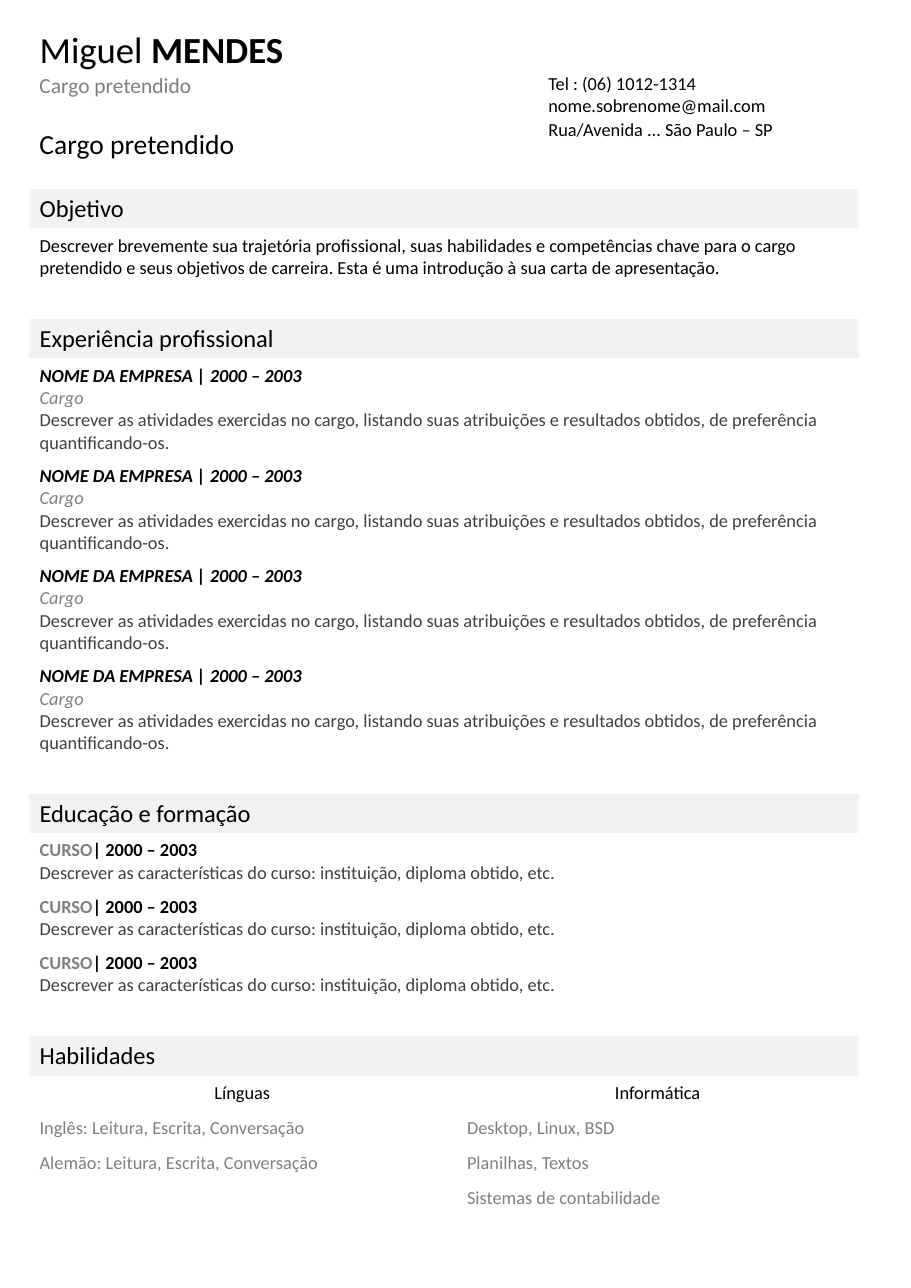
from dataclasses import dataclass

from pptx import Presentation
from pptx.dml.color import RGBColor as Color
from pptx.enum.text import MSO_ANCHOR as Anchor, MSO_AUTO_SIZE as AutoSize, PP_ALIGN as Align
from pptx.util import Inches, Pt


@dataclass(frozen=True)
class Theme:
    font: str = "Calibri"
    black: str = "000000"
    dark: str = "404040"
    grey: str = "808080"
    subtitle_grey: str = "7F7F7F"
    band: str = "F2F2F2"
    name: int = 24
    role: int = 18
    heading: int = 16
    subtitle: int = 14
    body: int = 12


theme = Theme()


def span(text, size=theme.body, color=theme.black, bold=False, italic=False):
    return text, size, color, bold, italic


def write(frame, lines, align=Align.LEFT):
    """Fill a text frame with one paragraph per line; a line is a list of spans."""
    frame.text = "\n".join("" for _ in lines)
    for para, spans in zip(frame.paragraphs, lines):
        para.alignment = align
        for text, size, color, bold, italic in spans:
            run = para.add_run()
            run.text = text
            run.font.name = theme.font
            run.font.size = Pt(size)
            run.font.bold = bold
            run.font.italic = italic
            run.font.color.rgb = Color.from_string(color)


deck = Presentation()
deck.slide_width, deck.slide_height = Inches(8.27), Inches(11.69)
page = deck.slides.add_slide(deck.slide_layouts[5])
left, contact_left = 0.26, 4.88

# Résumé rows: height, then the cells; a single cell spans both columns
job = [
    [span("NOME DA EMPRESA | 2000 – 2003", bold=True, italic=True)],
    [span("Cargo", color=theme.grey, italic=True)],
    [span("Descrever as atividades exercidas no cargo, listando suas atribuições e "
          "resultados obtidos, de preferência quantificando-os.", color=theme.dark)],
]
course = [
    [span("CURSO", color=theme.grey, bold=True), span("| 2000 – 2003", bold=True)],
    [span("Descrever as características do curso: instituição, diploma obtido, etc.",
          color=theme.dark)],
]
objective = [[span(
    "Descrever brevemente sua trajetória profissional, suas habilidades e competências "
    "chave para o cargo pretendido e seus objetivos de carreira. Esta é uma introdução "
    "à sua carta de apresentação.")]]
skills = [
    ("Inglês: Leitura, Escrita, Conversação", "Desktop, Linux, BSD"),
    ("Alemão: Leitura, Escrita, Conversação", "Planilhas, Textos"),
    ("", "Sistemas de contabilidade"),
]
sections = [
    ("Objetivo", 0.51, [objective]),
    ("Experiência profissional", 0.91, [job] * 4),
    ("Educação e formação", 0.51, [course] * 3),
    ("Habilidades", 0, []),
]
heading_height, gap_height, skill_height = 0.37, 0.3, 0.32
rows, heading_rows = [], []
for title, height, entries in sections:
    if rows:
        rows.append((gap_height, [[]]))
    heading_rows.append(len(rows))
    rows.append((heading_height, [[[span(title, theme.heading)]]]))
    rows += [(height, [entry]) for entry in entries]
skill_title_row = len(rows)
rows.append((skill_height, [[[span("Línguas")]], [[span("Informática")]]]))
for pair in skills:
    rows.append((skill_height, [[[span(text, color=theme.grey)]] if text else [] for text in pair]))

column_widths = 3.88, 3.66
table = page.shapes.add_table(
    len(rows), len(column_widths), Inches(left), Inches(1.71),
    Inches(sum(column_widths)), Inches(sum(height for height, _ in rows))).table
table.first_row = table.horz_banding = False
for column, width in zip(table.columns, column_widths):
    column.width = Inches(width)
for index, (height, contents) in enumerate(rows):
    table.rows[index].height = Inches(height)
    if len(contents) == 1:
        table.cell(index, 0).merge(table.cell(index, 1))
    for cell in table.rows[index].cells:
        if index in heading_rows:
            cell.fill.solid()
            cell.fill.fore_color.rgb = Color.from_string(theme.band)
        else:
            cell.fill.background()
    for column, lines in enumerate(contents):
        cell = table.cell(index, column)
        if lines:
            write(cell.text_frame, lines,
                  Align.CENTER if index == skill_title_row else Align.LEFT)
        else:
            cell.margin_top = cell.margin_bottom = 0

# Name and contact details above the table
header = [
    (left, 0.19, 2.44, 0.5, [span("Miguel ", theme.name), span("MENDES", theme.name, bold=True)]),
    (left, 0.61, 1.59, 0.34, [span("Cargo pretendido", theme.subtitle, theme.subtitle_grey)]),
    (contact_left, 0.61, 1.56, 0.3, [span("Tel : (06) 1012-1314")]),
    (contact_left, 0.81, 2.2, 0.3, [span("nome.sobrenome@mail.com")]),
    (contact_left, 1.02, 2.3, 0.3, [span("Rua/Avenida ... São Paulo – SP")]),
    (left, 1.1, 1.99, 0.4, [span("Cargo pretendido", theme.role)]),
]
for index, (x, y, width, height, spans) in enumerate(header):
    place = [Inches(value) for value in (x, y, width, height)]
    if index == 0:
        box = page.shapes.title
        box.left, box.top, box.width, box.height = place
    else:
        box = page.shapes.add_textbox(*place)
    frame = box.text_frame
    write(frame, [spans])
    frame.word_wrap = False
    frame.auto_size = AutoSize.SHAPE_TO_FIT_TEXT
    frame.vertical_anchor = Anchor.TOP

deck.save("out.pptx")
